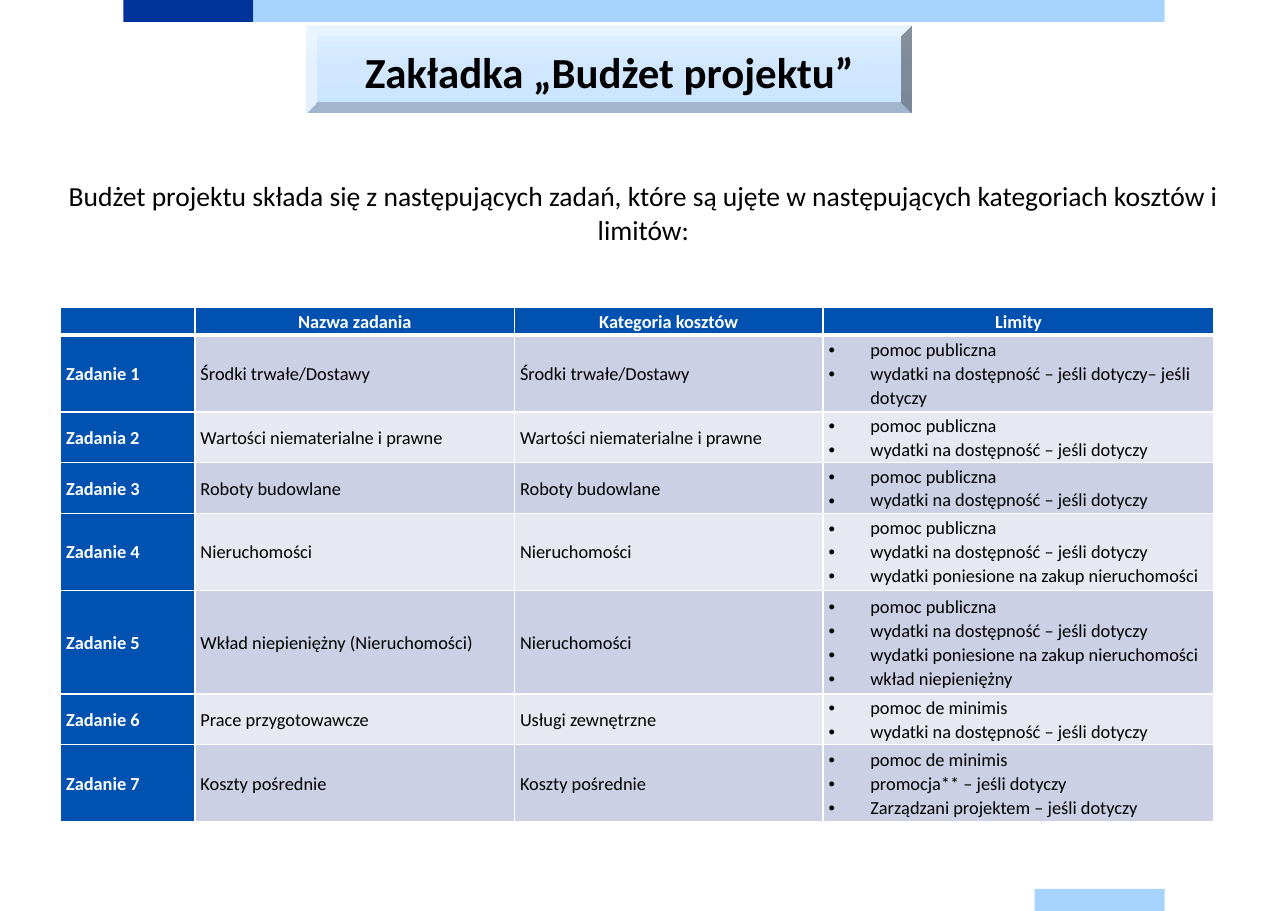
from lxml.etree import SubElement
from pptx import Presentation
from pptx.dml.color import RGBColor
from pptx.enum.shapes import MSO_SHAPE as Shape
from pptx.enum.text import MSO_ANCHOR as Anchor, MSO_AUTO_SIZE as AutoSize, PP_ALIGN as Align
from pptx.oxml import parse_xml
from pptx.oxml.ns import nsdecls, qn
from pptx.util import Pt

PX = 9144  # EMU in one px, 100 px to the inch

# Wording of the table
AID = "pomoc publiczna"
MINOR_AID = "pomoc de minimis"
ACCESS = "wydatki na dostępność – jeśli dotyczy"
PURCHASE = "wydatki poniesione na zakup nieruchomości"
HEADINGS = ["", "Nazwa zadania", "Kategoria kosztów", "Limity"]
TASKS = [
    ("Zadanie 1", "Środki trwałe/Dostawy", "Środki trwałe/Dostawy",
     [AID, ACCESS + "– jeśli dotyczy"]),
    ("Zadania 2", "Wartości niematerialne i prawne", "Wartości niematerialne i prawne",
     [AID, ACCESS]),
    ("Zadanie 3", "Roboty budowlane", "Roboty budowlane", [AID, ACCESS]),
    ("Zadanie 4", "Nieruchomości", "Nieruchomości", [AID, ACCESS, PURCHASE]),
    ("Zadanie 5", "Wkład niepieniężny (Nieruchomości)", "Nieruchomości",
     [AID, ACCESS, PURCHASE, "wkład niepieniężny"]),
    ("Zadanie 6", "Prace przygotowawcze", "Usługi zewnętrzne", [MINOR_AID, ACCESS]),
    ("Zadanie 7", "Koszty pośrednie", "Koszty pośrednie",
     [MINOR_AID, "promocja** – jeśli dotyczy", "Zarządzani projektem – jeśli dotyczy"]),
]
COLUMN_WIDTHS = [122, 290, 280, 355]
ROW_HEIGHTS = [25, 70, 46, 46, 70, 94, 46, 70]


def color(value):
    return RGBColor.from_string(value)


def write(para, text, size=12, ink="000000", bold=False, align=Align.LEFT,
          spacing=None, bullet=False):
    """Put formatted text into a paragraph."""
    if bullet:
        props = para._p.get_or_add_pPr()
        props.set("marL", str(38 * PX))
        props.set("indent", str(-38 * PX))
        SubElement(props, qn("a:buFont"), typeface="Arial")
        SubElement(props, qn("a:buChar"), char="•")
    para.alignment = align
    if spacing:
        para.line_spacing = spacing
    if not text:
        SubElement(para._p, qn("a:endParaRPr"), sz=str(size * 100))
        return
    span = para.add_run()
    span.text = text
    span.font.name = BudgetPage.font
    span.font.size = Pt(size)
    span.font.bold = bold
    span.font.color.rgb = color(ink)


class BudgetPage:
    font = "Calibri"
    navy, sky, blue, white = "003399", "A6D3FF", "0051B0", "FFFFFF"
    bands = ["CCD0E4", "E7E9F2"]
    glow = [(0, "E1F0FF"), (50, "D0E7FF"), (100, "CAE4FF")]

    def __init__(self, deck):
        self.page = deck.slides.add_slide(deck.slide_layouts[5])
        self.shapes = self.page.shapes

    def shape(self, kind, *place):
        item = self.shapes.add_shape(kind, *[value * PX for value in place])
        item.shadow.inherit = False
        return item

    def bar(self, fill, *place):
        bar = self.shape(Shape.RECTANGLE, *place)
        bar.fill.solid()
        bar.fill.fore_color.rgb = color(fill)
        bar.line.fill.background()

    def title(self, text, *place):
        plate = self.shape(Shape.BEVEL, *place)
        stops = "".join(f'<a:gs pos="{pos * 1000}"><a:srgbClr val="{tint}"/></a:gs>'
                        for pos, tint in self.glow)
        plate._element.spPr.insert(2, parse_xml(
            f'<a:gradFill {nsdecls("a")} rotWithShape="1"><a:gsLst>{stops}</a:gsLst>'
            '<a:lin ang="5400000" scaled="0"/></a:gradFill>'))
        plate.line.fill.background()

        title = self.shapes.title
        title.left, title.top, title.width, title.height = [value * PX for value in place]
        frame = title.text_frame
        frame.margin_left = frame.margin_right = frame.margin_top = frame.margin_bottom = 0
        frame.vertical_anchor = Anchor.MIDDLE
        frame.auto_size = AutoSize.NONE
        write(frame.paragraphs[0], text, size=28, bold=True, align=Align.CENTER,
              spacing=Pt(36))
        self.shapes._spTree.append(title._element)  # in front of the plate

    def text(self, text, *place):
        box = self.shapes.add_textbox(*[value * PX for value in place])
        box.text_frame.word_wrap = True
        write(box.text_frame.paragraphs[0], text, size=18, align=Align.CENTER)

    def cell(self, cell, lines, fill, bottom=1, **style):
        cell.margin_left = cell.margin_right = 5 * PX
        cell.margin_top = cell.margin_bottom = 0
        cell.vertical_anchor = Anchor.MIDDLE
        props = cell._tc.get_or_add_tcPr()
        for side, width in zip("LRTB", (1, 1, 1, bottom)):
            props.append(parse_xml(
                f'<a:ln{side} {nsdecls("a")} w="{Pt(width)}"><a:solidFill>'
                f'<a:srgbClr val="{self.white}"/></a:solidFill></a:ln{side}>'))
        cell.fill.solid()
        cell.fill.fore_color.rgb = color(fill)
        frame = cell.text_frame
        for number, line in enumerate(lines):
            para = frame.add_paragraph() if number else frame.paragraphs[0]
            write(para, line, spacing=1.07, **style)

    def table(self, left, top):
        table = self.shapes.add_table(
            len(ROW_HEIGHTS), len(COLUMN_WIDTHS), left * PX, top * PX,
            sum(COLUMN_WIDTHS) * PX, sum(ROW_HEIGHTS) * PX).table
        for column, width in zip(table.columns, COLUMN_WIDTHS):
            column.width = width * PX
        for row, height in zip(table.rows, ROW_HEIGHTS):
            row.height = height * PX
        label = {"fill": self.blue, "ink": self.white, "bold": True}
        for column, heading in enumerate(HEADINGS):
            self.cell(table.cell(0, column), [heading], bottom=3, align=Align.CENTER, **label)
        for row, (task, name, category, limits) in enumerate(TASKS, 1):
            band = self.bands[(row - 1) % 2]
            self.cell(table.cell(row, 0), [task], **label)
            self.cell(table.cell(row, 1), [name], band)
            self.cell(table.cell(row, 2), [category], band)
            self.cell(table.cell(row, 3), limits, band, bullet=True)


def main():
    deck = Presentation()
    deck.slide_width, deck.slide_height = 1169 * PX, 827 * PX
    budget = BudgetPage(deck)

    # Bars at the page edges
    budget.bar(budget.navy, 112, 0, 118, 20)
    budget.bar(budget.sky, 230, 0, 827, 20)
    budget.bar(budget.sky, 939, 807, 118, 20)

    # Title and introduction
    budget.title("Zakładka „Budżet projektu”", 278, 23, 550, 80)
    budget.text("Budżet projektu składa się z następujących zadań, które są ujęte "
                "w następujących kategoriach kosztów i limitów:", 33, 158, 1102, 71)

    # Tasks, cost categories and limits
    budget.table(55, 279)
    deck.save("out.pptx")


if __name__ == "__main__":
    main()
